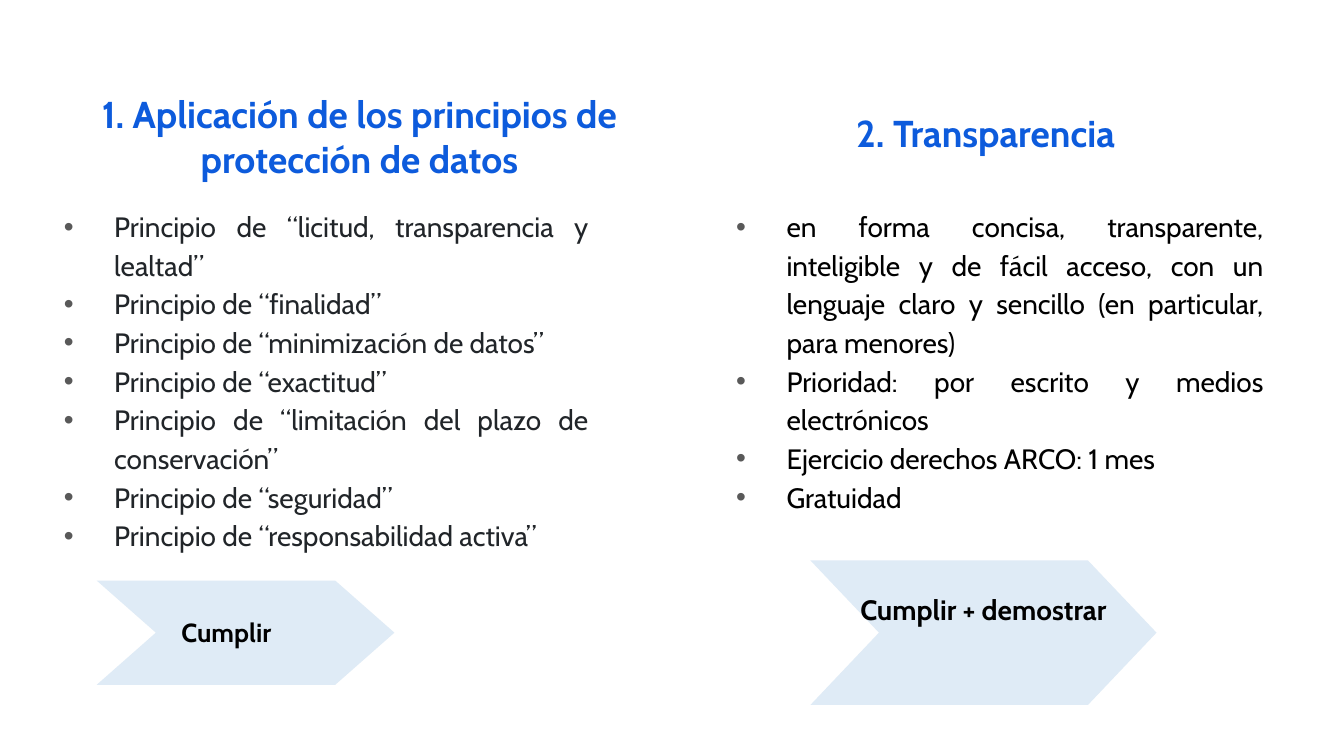
from lxml import etree
from pptx import Presentation
from pptx.dml.color import RGBColor
from pptx.enum.shapes import MSO_SHAPE
from pptx.enum.text import MSO_ANCHOR, MSO_AUTO_SIZE, PP_ALIGN
from pptx.oxml.ns import qn
from pptx.util import Inches, Pt

CHEVRON = MSO_SHAPE.CHEVRON
TOP, MID, BOTTOM = MSO_ANCHOR.TOP, MSO_ANCHOR.MIDDLE, MSO_ANCHOR.BOTTOM
LEFT, CENTER, JUSTIFY = PP_ALIGN.LEFT, PP_ALIGN.CENTER, PP_ALIGN.JUSTIFY
NONE = MSO_AUTO_SIZE.NONE
BLUE, GRAY, INK, BLACK, PALE = "0D5BDC", "595959", "212529", "000000", "DFEBF6"

deck = Presentation()
deck.slide_width = Inches(10)
deck.slide_height = deck.slide_width * 9 // 16
slide = deck.slides.add_slide(deck.slide_layouts[4])
unit = deck.slide_width / 100


def place(shape, *box):
    shape.left, shape.top, shape.width, shape.height = [round(n * unit) for n in box]


def write(shape, lines, size, color, bold, align, anchor, space=1.0):
    frame = shape.text_frame
    frame.text = "\n".join(lines)
    frame.word_wrap = True
    frame.auto_size = NONE
    frame.vertical_anchor = anchor
    frame.margin_left = frame.margin_right = round(unit)
    frame.margin_top = frame.margin_bottom = round(unit)
    for para in frame.paragraphs:
        para.alignment = align
        para.line_spacing = space
        para.space_before = Pt(0)
        font = para.font
        font.name, font.size, font.bold = "Cabin", Pt(size), bold
        font.color.rgb = RGBColor.from_string(color)
    return frame


spots = {spot.placeholder_format.idx: spot for spot in slide.placeholders}
spots[1].element.getparent().remove(spots[1].element)

title, head = spots[0], spots[3]
place(title, 5.6, 5.8, 42.3, 7.1)
write(title, ["1. Aplicación de los principios de protección de datos"], 20, BLUE, True, CENTER, TOP)
place(head, 62.7, 5.8, 25.8, 6.75)
write(head, ["2. Transparencia"], 20, BLUE, True, JUSTIFY, BOTTOM, 1.15)

rules = [
    "Principio de “licitud, transparencia y lealtad”",
    "Principio de “finalidad”",
    "Principio de “minimización de datos”",
    "Principio de “exactitud”",
    "Principio de “limitación del plazo de conservación”",
    "Principio de “seguridad”",
    "Principio de “responsabilidad activa”",
]
duties = [
    "en forma concisa, transparente, inteligible y de fácil acceso, "
    "con un lenguaje claro y sencillo (en particular, para menores)",
    "Prioridad: por escrito y medios electrónicos",
    "Ejercicio derechos ARCO: 1 mes",
    "Gratuidad",
]
lists = [
    (2, rules, INK, (2.5, 14.23, 42.3, 40.2)),
    (4, duties, BLACK, (52.52, 14.23, 42.5, 30.2)),
]
for idx, lines, color, box in lists:
    place(spots[idx], *box)
    frame = write(spots[idx], lines, 15, color, False, JUSTIFY, TOP, 1.15)
    for para in frame.paragraphs:
        props = para._p.get_or_add_pPr()
        props.set("marL", str(round(5 * unit)))
        props.set("indent", str(round(-3.75 * unit)))
        tint = etree.SubElement(props, qn("a:buClr"))
        etree.SubElement(tint, qn("a:srgbClr"), val=GRAY)
        etree.SubElement(props, qn("a:buFont"), typeface="Arial")
        etree.SubElement(props, qn("a:buChar"), char="•")
        props.append(props.find(qn("a:defRPr")))

arrows = []
for box, notch in [((7.2, 43.2, 22.15, 7.75), 4.4), ((60.3, 41.7, 25.75, 10.75), 5.1)]:
    arrow = slide.shapes.add_shape(CHEVRON, 0, 0, 0, 0)
    place(arrow, *box)
    arrow.adjustments[0] = notch / box[3]
    arrow.shadow.inherit = False
    arrow.fill.solid()
    arrow.fill.fore_color.rgb = RGBColor.from_string(PALE)
    arrow.line.fill.background()
    arrows.append(arrow)

label = slide.shapes.add_textbox(0, 0, 0, 0)
place(label, 9.3, 45.35, 50, 3.4)
frame = write(label, ["Cumplir"], 14, BLACK, True, LEFT, MID)
frame.margin_left = round(4.2 * unit)

frame = write(arrows[1], ["Cumplir + demostrar"], 15, BLACK, True, CENTER, TOP)
frame.word_wrap = False
frame.margin_left = frame.margin_right = 0
frame.margin_top = round(2.35 * unit)

deck.save("out.pptx")
